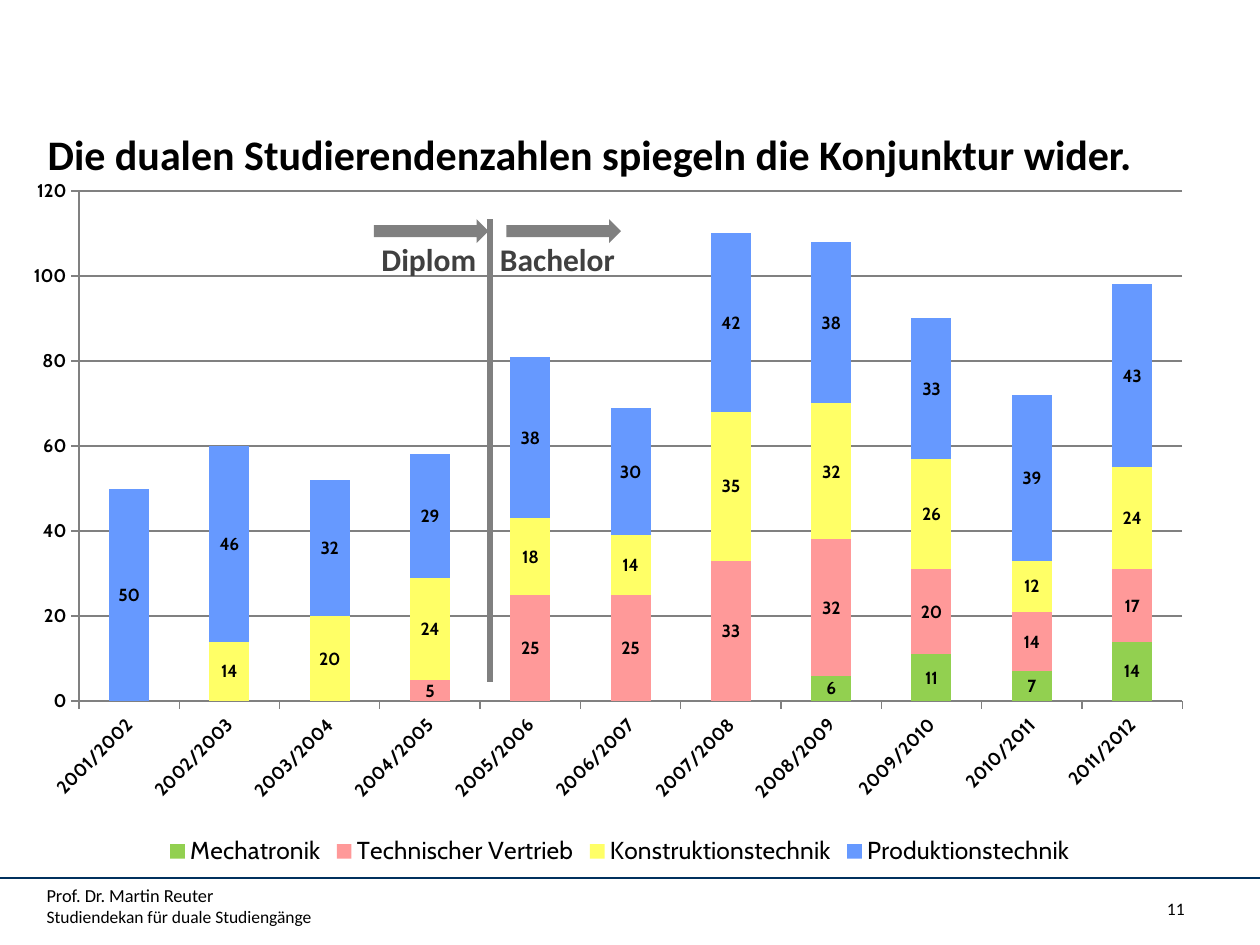
from typing import NamedTuple

from lxml.etree import SubElement
from pptx import Presentation
from pptx.chart.data import CategoryChartData
from pptx.dml.color import RGBColor
from pptx.enum.chart import XL_CHART_TYPE, XL_LEGEND_POSITION, XL_TICK_MARK
from pptx.enum.shapes import MSO_CONNECTOR, MSO_SHAPE
from pptx.enum.text import PP_ALIGN
from pptx.oxml.ns import qn
from pptx.util import Cm, Pt

BLACK = RGBColor(0x00, 0x00, 0x00)
NAVY = RGBColor(0x00, 0x30, 0x5D)
GRAY = RGBColor(0x80, 0x80, 0x80)
DARK = RGBColor(0x40, 0x40, 0x40)
GREEN = RGBColor(0x92, 0xD0, 0x50)
PINK = RGBColor(0xFF, 0x99, 0x99)
YELLOW = RGBColor(0xFF, 0xFF, 0x66)
BLUE = RGBColor(0x66, 0x99, 0xFF)


class Box(NamedTuple):
    left: float
    top: float
    width: float
    height: float

    def place(self) -> list:
        return [Cm(side) for side in self]


class Run(NamedTuple):
    text: str
    size: float
    color: RGBColor = BLACK
    bold: bool = False


class Course(NamedTuple):
    name: str
    color: RGBColor
    counts: list


class Phase(NamedTuple):
    name: str
    arrow: float
    label: Box


YEARS = [f"{year}/{year + 1}" for year in range(2001, 2012)]
COURSES = [
    Course("Mechatronik", GREEN, [None] * 7 + [6, 11, 7, 14]),
    Course("Technischer Vertrieb", PINK, [None] * 3 + [5, 25, 25, 33, 32, 20, 14, 17]),
    Course("Konstruktionstechnik", YELLOW, [None, 14, 20, 24, 18, 14, 35, 32, 26, 12, 24]),
    Course("Produktionstechnik", BLUE, [50, 46, 32, 29, 38, 30, 42, 38, 33, 39, 43]),
]
PHASES = [
    Phase("Diplom", 7.54, Box(7.44, 4.72, 2.51, 1.02)),
    Phase("Bachelor", 10.21, Box(9.83, 4.72, 2.95, 1.02)),
]


def add_text(slide, box: Box, runs: list[Run], align=PP_ALIGN.LEFT, space: float = 1.0) -> None:
    """Write the runs in one box, one line each."""
    frame = slide.shapes.add_textbox(*box.place()).text_frame
    frame.word_wrap = True
    para = frame.paragraphs[0]
    para.alignment = align
    para.line_spacing = space
    for index, part in enumerate(runs):
        if index:
            para.add_line_break()
        run = para.add_run()
        run.text = part.text
        run.font.name = "Calibri"
        run.font.size = Pt(part.size)
        run.font.bold = part.bold
        run.font.color.rgb = part.color


def add_line(slide, start: tuple, end: tuple, color: RGBColor, width: float) -> None:
    ends = [Cm(point) for point in start + end]
    line = slide.shapes.add_connector(MSO_CONNECTOR.STRAIGHT, *ends)
    line.line.color.rgb = color
    line.line.width = Pt(width)
    SubElement(line._element.spPr, qn("a:effectLst"))


def add_phase(slide, phase: Phase) -> None:
    box = Box(phase.arrow, 4.42, 2.31, 0.48)
    arrow = slide.shapes.add_shape(MSO_SHAPE.RIGHT_ARROW, *box.place())
    arrow.shadow.inherit = False
    arrow.fill.solid()
    arrow.fill.fore_color.rgb = GRAY
    arrow.line.fill.background()
    add_text(slide, phase.label, [Run(phase.name, 18, DARK, True)])


def set_font(font, size: float, bold: bool = False) -> None:
    font.name = "Cabin"
    font.size = Pt(size)
    font.bold = bold
    font.color.rgb = BLACK


def set_plot(chart, box: Box) -> None:
    """Fix the inner plot area, in parts of the chart."""
    area = chart._chartSpace.chart.plotArea
    for old in area.findall(qn("c:layout")):
        area.remove(old)
    layout = SubElement(area, qn("c:layout"))
    area.insert(0, layout)
    manual = SubElement(layout, qn("c:manualLayout"))
    rules = [("layoutTarget", "inner"), ("xMode", "edge"), ("yMode", "edge")]
    rules += zip("xywh", box)
    for tag, value in rules:
        SubElement(manual, qn(f"c:{tag}")).set("val", str(value))


def add_counts(slide, box: Box) -> None:
    data = CategoryChartData()
    data.categories = YEARS
    for course in COURSES:
        data.add_series(course.name, course.counts)
    chart = slide.shapes.add_chart(XL_CHART_TYPE.COLUMN_STACKED, *box.place(), data).chart
    set_font(chart.font, 10)
    chart.has_title = False
    set_plot(chart, Box(0.05, 0.057, 0.918, 0.707))

    # Columns and their values
    plot = chart.plots[0]
    plot.gap_width = 150
    plot.overlap = 100
    plot.vary_by_categories = False
    for course, series in zip(COURSES, plot.series):
        series.format.fill.solid()
        series.format.fill.fore_color.rgb = course.color
        labels = series.data_labels
        labels.show_value = True
        set_font(labels.font, 10, True)

    # Axes
    for axis in (chart.category_axis, chart.value_axis):
        axis.major_tick_mark = XL_TICK_MARK.OUTSIDE
        axis.minor_tick_mark = XL_TICK_MARK.NONE
        axis.format.line.color.rgb = GRAY
        axis.format.line.width = Pt(0.75)
        set_font(axis.tick_labels.font, 10.5, True)
    chart.category_axis._element.txPr.bodyPr.set("rot", "-2700000")
    scale = chart.value_axis
    scale.minimum_scale, scale.maximum_scale, scale.major_unit = 0, 120, 20
    scale.has_major_gridlines = True
    scale.major_gridlines.format.line.color.rgb = GRAY
    scale.major_gridlines.format.line.width = Pt(0.75)

    # Legend
    chart.has_legend = True
    chart.legend.position = XL_LEGEND_POSITION.BOTTOM
    chart.legend.include_in_layout = False
    set_font(chart.legend.font, 14)


def main() -> None:
    deck = Presentation()
    deck.slide_width, deck.slide_height = Cm(25.4), Cm(19.05)
    slide = deck.slides.add_slide(deck.slide_layouts[6])

    # Footer
    add_text(slide, Box(19.48, 17.98, 4.65, 0.64), [Run("11", 10)], PP_ALIGN.RIGHT)
    add_line(slide, (0, 17.7), (25.4, 17.7), NAVY, 0.75)
    add_text(slide, Box(0.69, 17.7, 16.99, 0.99), [
        Run("Prof. Dr. Martin Reuter", 10.5),
        Run("Studiendekan für duale Studiengänge", 10),
    ])

    # Title and chart
    title = "Die dualen Studierendenzahlen spiegeln die Konjunktur wider."
    add_text(slide, Box(0.71, 2.26, 24.05, 1.5), [Run(title, 24, BLACK, True)], space=1.2)
    add_counts(slide, Box(0.38, 3.02, 24.23, 14.55))

    # Change of degree
    add_line(slide, (9.88, 13.74), (9.88, 4.42), GRAY, 3)
    for phase in PHASES:
        add_phase(slide, phase)

    deck.save("out.pptx")


if __name__ == "__main__":
    main()
